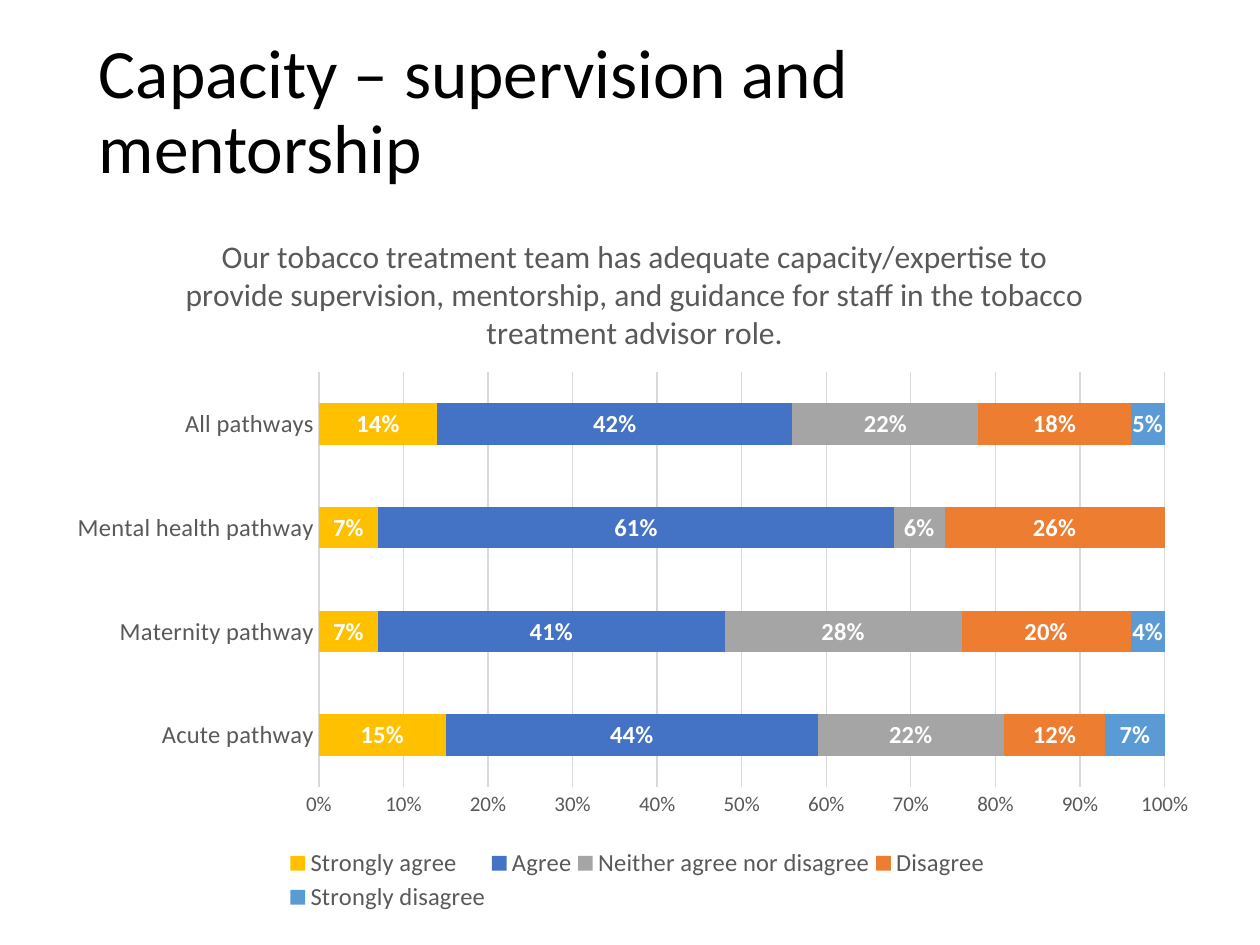
"""Build a slide with a stacked bar chart on supervision and mentorship capacity."""
from dataclasses import dataclass

from lxml import etree
from pptx import Presentation
from pptx.chart.chart import Chart
from pptx.chart.data import CategoryChartData
from pptx.dml.color import RGBColor
from pptx.enum.chart import XL_CHART_TYPE, XL_LABEL_POSITION, XL_LEGEND_POSITION, XL_TICK_MARK
from pptx.enum.text import MSO_ANCHOR, PP_ALIGN
from pptx.oxml.ns import qn
from pptx.text.text import Font, TextFrame
from pptx.util import Pt

BAR_STACKED = XL_CHART_TYPE.BAR_STACKED
LABEL_CENTER = XL_LABEL_POSITION.CENTER
LEGEND_BOTTOM = XL_LEGEND_POSITION.BOTTOM
NO_TICK = XL_TICK_MARK.NONE
MIDDLE = MSO_ANCHOR.MIDDLE
LEFT, CENTER = PP_ALIGN.LEFT, PP_ALIGN.CENTER

BLACK = RGBColor(0x00, 0x00, 0x00)
WHITE = RGBColor(0xFF, 0xFF, 0xFF)
DARK_GREY = RGBColor(0x59, 0x59, 0x59)
GRID_GREY = RGBColor(0xD9, 0xD9, 0xD9)
GOLD = RGBColor(0xFF, 0xC0, 0x00)
BLUE = RGBColor(0x44, 0x72, 0xC4)
GREY = RGBColor(0xA5, 0xA5, 0xA5)
ORANGE = RGBColor(0xED, 0x7D, 0x31)
LIGHT_BLUE = RGBColor(0x5B, 0x9B, 0xD5)

FONT = "Calibri"
PERCENT = "0%"
PERCENT_HIDE_ZERO = "0%;;"
QUESTION = (
    "Our tobacco treatment team has adequate capacity/expertise to provide supervision, "
    "mentorship, and guidance for staff in the tobacco treatment advisor role."
)
PATHWAYS = ["Acute pathway", "Maternity pathway", "Mental health pathway", "All pathways"]


@dataclass
class Answer:
    name: str
    values: tuple[float, ...]
    color: RGBColor


ANSWERS = [
    Answer("Strongly agree", (0.15, 0.07, 0.07, 0.14), GOLD),
    Answer("Agree", (0.44, 0.41, 0.61, 0.42), BLUE),
    Answer("Neither agree nor disagree", (0.22, 0.28, 0.06, 0.22), GREY),
    Answer("Disagree", (0.12, 0.2, 0.26, 0.18), ORANGE),
    Answer("Strongly disagree", (0.07, 0.04, 0, 0.05), LIGHT_BLUE),
]


def set_font(font: Font, size: float, color: RGBColor, bold: bool = False) -> None:
    font.name, font.size, font.bold = FONT, Pt(size), bold
    font.color.rgb = color


def write(tf: TextFrame, text: str, *, size: float, color: RGBColor,
          align: PP_ALIGN = LEFT, spacing: float = 1.0) -> None:
    p = tf.paragraphs[0]
    p.alignment, p.line_spacing = align, spacing
    r = p.add_run()
    r.text = text
    set_font(r.font, size, color)


def place(chart: Chart, tag: str, index: int, **bounds: float) -> None:
    parent = chart._chartSpace.find(f".//{qn(tag)}")
    for old in parent.findall(qn("c:layout")):
        parent.remove(old)
    layout = etree.Element(qn("c:layout"))
    manual = etree.SubElement(layout, qn("c:manualLayout"))
    if tag == "c:plotArea":
        etree.SubElement(manual, qn("c:layoutTarget")).set("val", "inner")
    for mode in ("xMode", "yMode"):
        etree.SubElement(manual, qn(f"c:{mode}")).set("val", "edge")
    for key, value in bounds.items():
        etree.SubElement(manual, qn(f"c:{key}")).set("val", str(value))
    parent.insert(index, layout)


def format_axes(chart: Chart) -> None:
    cat, val = chart.category_axis, chart.value_axis
    for axis, size in ((cat, 14), (val, 12)):
        axis.major_tick_mark = axis.minor_tick_mark = NO_TICK
        set_font(axis.tick_labels.font, size, DARK_GREY)
    cat.has_major_gridlines = False
    val.has_major_gridlines = True
    for line in (cat.format.line, val.major_gridlines.format.line):
        line.color.rgb, line.width = GRID_GREY, Pt(0.75)
    val.format.line.fill.background()
    val.minimum_scale, val.maximum_scale, val.major_unit = 0, 1, 0.1
    val.tick_labels.number_format = PERCENT
    val.tick_labels.number_format_is_linked = False


def format_bars(chart: Chart) -> None:
    plot = chart.plots[0]
    plot.gap_width, plot.overlap, plot.vary_by_categories = 150, 100, False
    for series, answer in zip(plot.series, ANSWERS):
        series.format.fill.solid()
        series.format.fill.fore_color.rgb = answer.color
        labels = series.data_labels
        labels.show_value = True
        labels.number_format = PERCENT if all(answer.values) else PERCENT_HIDE_ZERO
        labels.number_format_is_linked = False
        labels.position = LABEL_CENTER
        set_font(labels.font, 14, WHITE, bold=True)


def main() -> None:
    prs = Presentation()
    prs.slide_width, prs.slide_height = Pt(720), Pt(540)
    s = prs.slides.add_slide(prs.slide_layouts[6])

    tf = s.shapes.add_textbox(Pt(49.5), Pt(30), Pt(621), Pt(70)).text_frame
    tf.word_wrap, tf.vertical_anchor = True, MIDDLE
    write(tf, "Capacity – supervision and mentorship", size=39.6, color=BLACK, spacing=0.9)

    data = CategoryChartData(number_format=PERCENT)
    data.categories = PATHWAYS
    for answer in ANSWERS:
        data.add_series(answer.name, answer.values)
    chart = s.shapes.add_chart(BAR_STACKED, Pt(30), Pt(114.5), Pt(662), Pt(409), data).chart
    set_font(chart.font, 10, BLACK)
    chart.has_title = True
    write(chart.chart_title.text_frame, QUESTION, size=18, color=DARK_GREY, align=CENTER)
    chart.has_legend = True
    chart.legend.position = LEGEND_BOTTOM
    chart.legend.include_in_layout = False
    set_font(chart.legend.font, 14, DARK_GREY)
    format_axes(chart)
    format_bars(chart)
    place(chart, "c:title", 1, x=0.11, y=0.04)
    place(chart, "c:plotArea", 0, x=0.23, y=0.24, w=0.73, h=0.58)
    place(chart, "c:legend", 1, x=0.2, y=0.9, w=0.61, h=0.1)

    prs.save("out.pptx")


if __name__ == "__main__":
    main()
